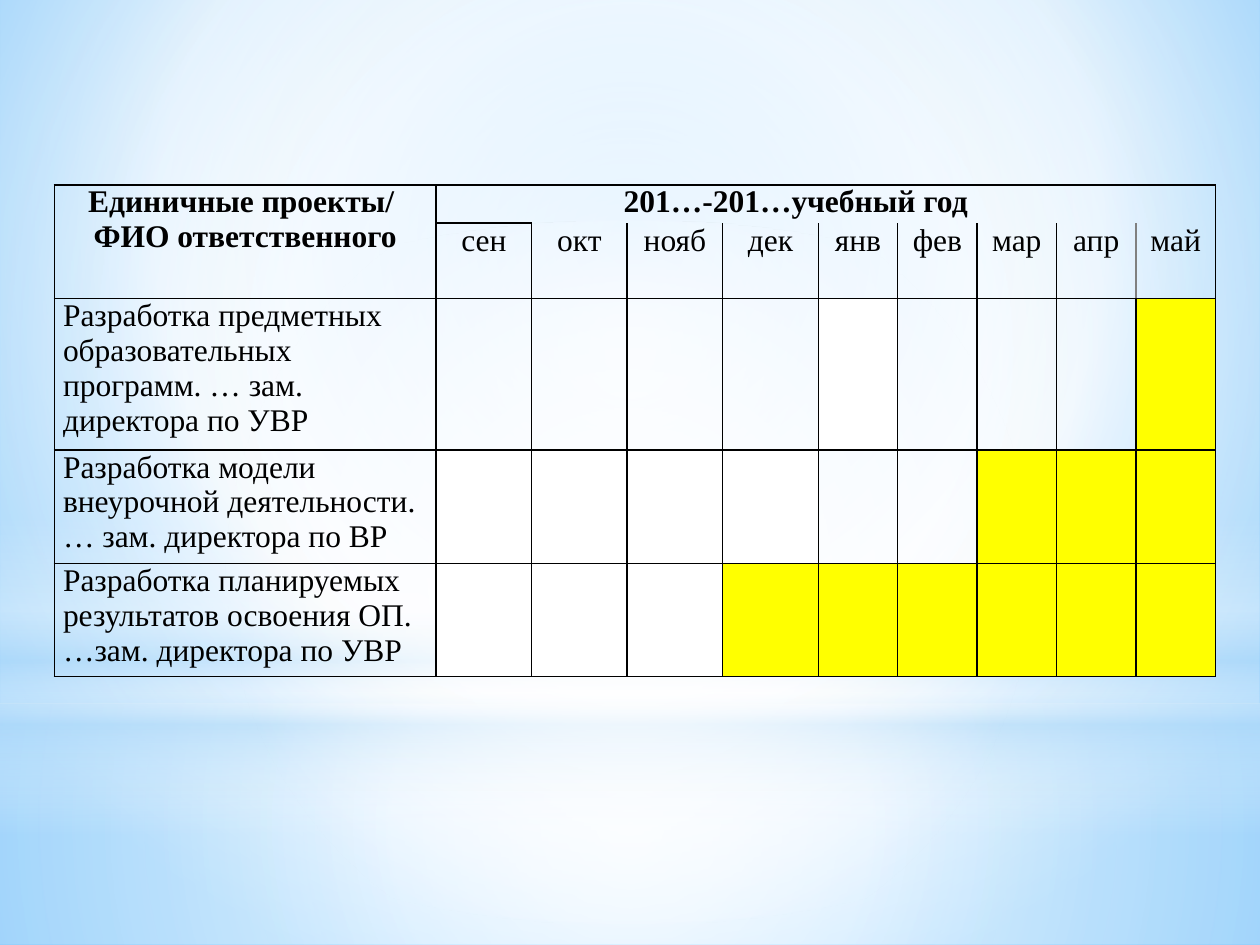
"""Builds a slide with a school-year schedule of single projects."""
from lxml.etree import SubElement, Element
from pptx import Presentation
from pptx.dml.color import RGBColor
from pptx.enum.shapes import MSO_SHAPE as Preset
from pptx.enum.text import PP_ALIGN as Align
from pptx.oxml.ns import qn
from pptx.util import Pt

THEME = {
    "font": "Times New Roman", "size": 18, "ink": "000000", "soft": "808080",
    "done": "FFFFFF", "active": "FFFF00", "sky": "B4DCFA", "glow": "FFFFFF",
    "sky_core": "9ED5FF", "sky_edge": "5BB9FF",
}
CORNER = ["Единичные проекты/ ", "ФИО ответственного"]
YEAR = "201…-201…учебный год"
MONTHS = ["сен", "окт", "нояб", "дек", "янв", "фев", "мар", "апр", "май"]
PROJECTS = [
    ("Разработка предметных образовательных программ. … зам. директора по УВР", "....d...a"),
    ("Разработка модели внеурочной деятельности. … зам. директора по ВР", "dddd..aaa"),
    ("Разработка планируемых результатов освоения ОП. …зам. директора по УВР", "dddaaaaaa"),
]
STATES = {"d": "done", "a": "active"}
COLUMNS = [218.2] + [54.6] * 4 + [45.4] * 5
ROWS = [21.9, 43.2, 86.4, 64.8, 64.8]
TABLE_LEFT, TABLE_TOP = 31, 105.6
YEAR_TAB = 102.2

CENTRE = (50, 50, 50, 50)
SKY = ([(0, "sky_core", 100), (60, "glow", 100), (100, "sky_edge", 100)], (20, 10, 20, 60))
LIGHTS = [
    (Preset.RECTANGLE, (0, 401.8, 720, 138.2),
     [(0, "glow", 91), (37, "glow", 76), (100, "sky", 79)], CENTRE),
    (Preset.RECTANGLE, (0, 0, 720, 401.8),
     [(0, "glow", 89), (48, "glow", 62), (100, "sky", 79)], CENTRE),
    (Preset.RECTANGLE, (0, 296.6, 720, 180),
     [(0, "glow", 0), (29, "glow", 30), (45, "sky", 40), (55, "glow", 26),
      (65, "sky", 60), (100, "glow", 0)], None),
    (Preset.OVAL, (0, 126, 720, 401.8), [(0, "glow", 100), (56, "glow", 0)], CENTRE),
]


def paint_gradient(fill, owner, stops, focus):
    fill.gradient()
    gradient = next(owner.iter(qn("a:gradFill")))
    gradient.clear()
    gradient.set("rotWithShape", "1")
    stop_list = SubElement(gradient, qn("a:gsLst"))
    for position, tone, opacity in stops:
        stop = SubElement(stop_list, qn("a:gs"), pos=str(position * 1000))
        colour = SubElement(stop, qn("a:srgbClr"), val=THEME[tone])
        if opacity < 100:
            SubElement(colour, qn("a:alpha"), val=str(opacity * 1000))
    if focus:
        circle = SubElement(gradient, qn("a:path"), path="circle")
        SubElement(circle, qn("a:fillToRect"),
                   {side: str(share * 1000) for side, share in zip("ltrb", focus)})
    else:
        SubElement(gradient, qn("a:lin"), ang="5400000", scaled="0")


def add_light(slide, preset, box, stops, focus):
    light = slide.shapes.add_shape(preset, *map(Pt, box))
    light.shadow.inherit = False
    light.line.fill.background()
    paint_gradient(light.fill, light.element, stops, focus)


def set_borders(cell, tones):
    properties = cell._tc.get_or_add_tcPr()
    for index, (side, tone) in enumerate(zip("LRTB", tones)):
        border = Element(qn(f"a:ln{side}"), w=str(Pt(1)))
        if tone:
            paint = SubElement(border, qn("a:solidFill"))
            SubElement(paint, qn("a:srgbClr"), val=THEME[tone])
        else:
            SubElement(border, qn("a:noFill"))
        properties.insert(index, border)


def write(cell, lines, align=Align.LEFT, bold=False):
    cell.text_frame.word_wrap = True
    for index, line in enumerate(lines):
        frame = cell.text_frame
        paragraph = frame.add_paragraph() if index else frame.paragraphs[0]
        paragraph.alignment = align
        run = paragraph.add_run()
        run.text = line
        run.font.name = THEME["font"]
        run.font.size = Pt(THEME["size"])
        run.font.bold = bold
        run.font.color.rgb = RGBColor.from_string(THEME["ink"])


def border_tones(row, column):
    last = len(MONTHS)
    left = "soft" if (row, column) == (1, last) else "ink"
    right = "soft" if (row, column) == (1, last - 1) else "ink"
    top = None if row == 1 and column > 1 else "ink"
    bottom = None if row == 0 and column > 0 else "ink"
    return left, right, top, bottom


def add_schedule(slide):
    schedule = slide.shapes.add_table(
        len(ROWS), len(COLUMNS), Pt(TABLE_LEFT), Pt(TABLE_TOP),
        Pt(sum(COLUMNS)), Pt(sum(ROWS))).table
    schedule.first_row = schedule.horz_banding = False
    for column, width in zip(schedule.columns, COLUMNS):
        column.width = Pt(width)
    for row, height in zip(schedule.rows, ROWS):
        row.height = Pt(height)
    for row in range(len(ROWS)):
        for column in range(len(COLUMNS)):
            cell = schedule.cell(row, column)
            cell.margin_left = cell.margin_right = Pt(5)
            cell.margin_top = cell.margin_bottom = 0
            cell.fill.background()
            set_borders(cell, border_tones(row, column))
    corner, year = schedule.cell(0, 0), schedule.cell(0, 1)
    corner.merge(schedule.cell(1, 0))
    year.merge(schedule.cell(0, len(MONTHS)))
    write(corner, CORNER, Align.CENTER, True)
    write(year, ["\t" + YEAR], bold=True)
    tabs = SubElement(year.text_frame.paragraphs[0]._p.get_or_add_pPr(), qn("a:tabLst"))
    SubElement(tabs, qn("a:tab"), pos=str(Pt(YEAR_TAB)), algn="l")
    for column, month in enumerate(MONTHS, 1):
        write(schedule.cell(1, column), [month], Align.CENTER)
    for row, (project, plan) in enumerate(PROJECTS, 2):
        write(schedule.cell(row, 0), [project])
        for column, state in enumerate(plan, 1):
            if state in STATES:
                fill = schedule.cell(row, column).fill
                fill.solid()
                fill.fore_color.rgb = RGBColor.from_string(THEME[STATES[state]])


def main():
    deck = Presentation()
    deck.slide_width, deck.slide_height = Pt(720), Pt(540)
    slide = deck.slides.add_slide(deck.slide_layouts[6])
    paint_gradient(slide.background.fill, slide.element, *SKY)
    for light in LIGHTS:
        add_light(slide, *light)
    add_schedule(slide)
    deck.save("out.pptx")


if __name__ == "__main__":
    main()
